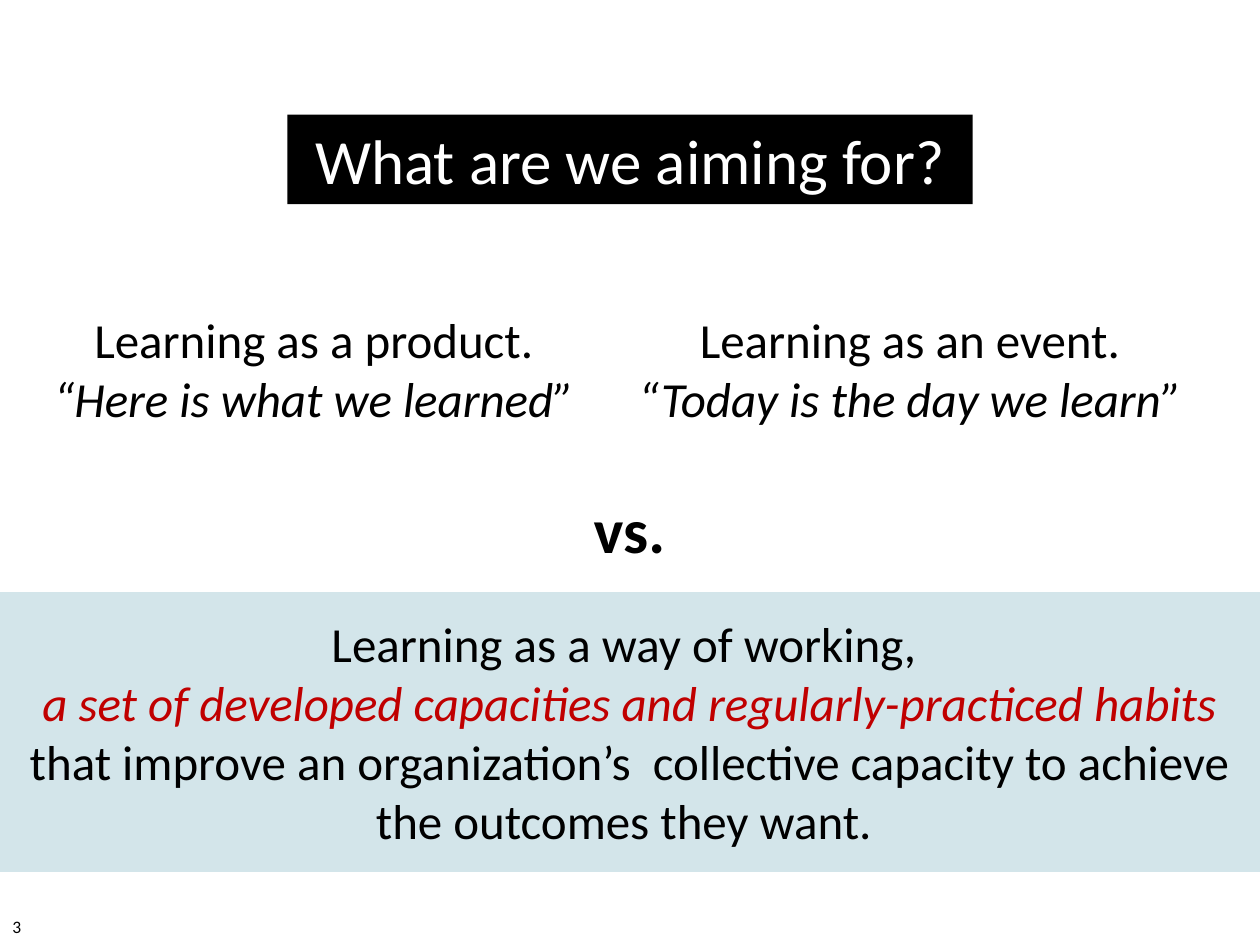
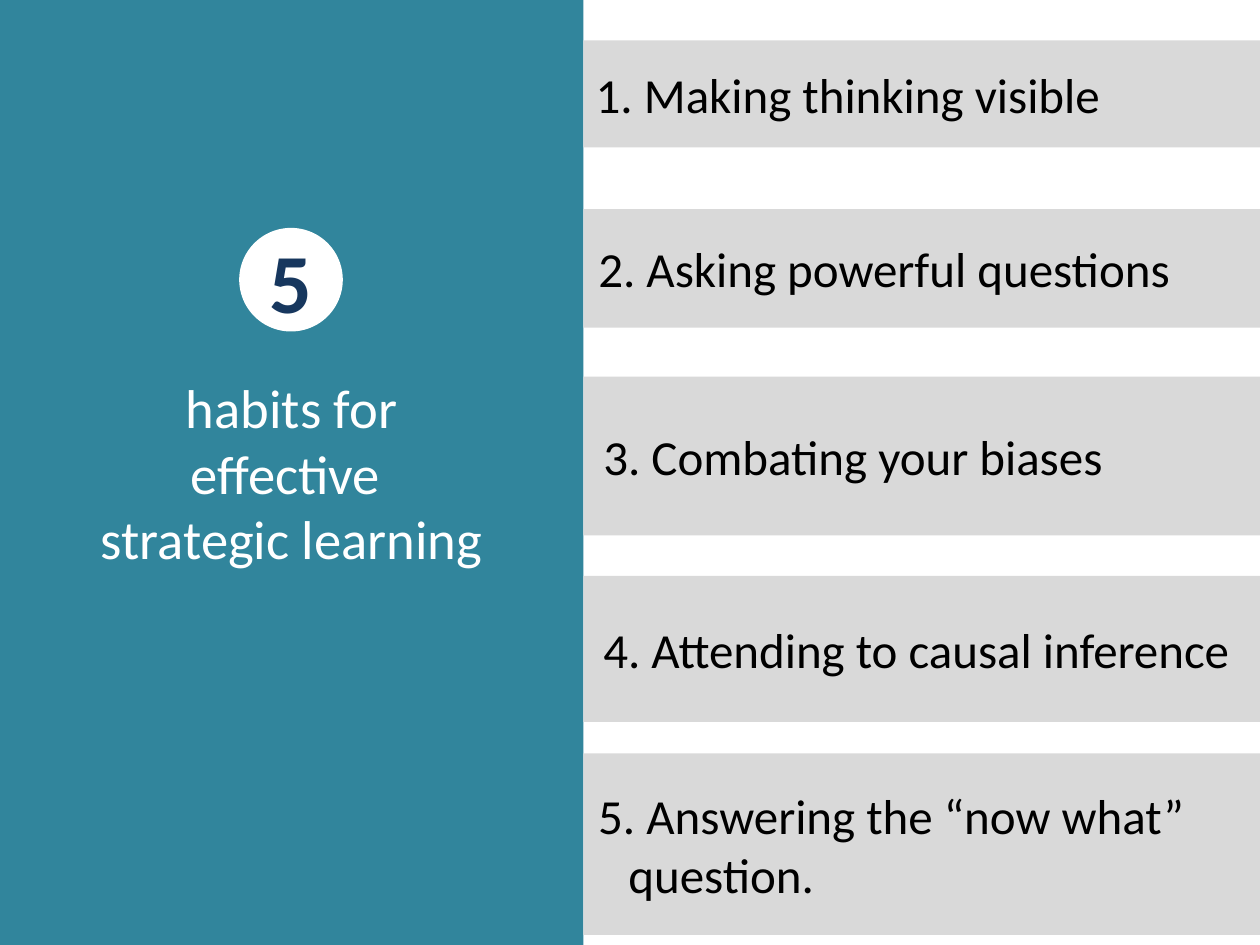
"""Build two slides on strategic learning as a way of working."""
from lxml import etree
from pptx import Presentation
from pptx.dml.color import RGBColor
from pptx.enum.shapes import MSO_SHAPE
from pptx.enum.text import MSO_ANCHOR, MSO_AUTO_SIZE, PP_ALIGN
from pptx.oxml.ns import qn
from pptx.util import Inches, Pt

FONT = "Calibri"
BLACK = RGBColor(0x00, 0x00, 0x00)
WHITE = RGBColor(0xFF, 0xFF, 0xFF)
TEAL = RGBColor(0x31, 0x85, 0x9C)
RED = RGBColor(0xC0, 0x00, 0x00)
NAVY = RGBColor(0x17, 0x37, 0x5E)
GRAY = RGBColor(0xD9, 0xD9, 0xD9)
RECTANGLE, OVAL = MSO_SHAPE.RECTANGLE, MSO_SHAPE.OVAL
LEFT, CENTER = PP_ALIGN.LEFT, PP_ALIGN.CENTER
TOP, MIDDLE = MSO_ANCHOR.TOP, MSO_ANCHOR.MIDDLE
NO_AUTOFIT = MSO_AUTO_SIZE.NONE
TITLE_ONLY, BLANK = 5, 6
SLIDE_WIDTH, SLIDE_HEIGHT = 10, 7.5
PANEL_WIDTH = 4.63
STATEMENT_TOP_INSET = 0.17

HABITS = [
    ("1. Making thinking visible", 0.32, 0.85, 0, 0),
    ("2. Asking powerful questions", 1.66, 0.94, 0.45, -0.43),
    ("3. Combating your biases", 2.99, 1.26, 0.51, -0.45),
    ("4. Attending to causal inference", 4.57, 1.16, 0.45, -0.39),
    ("5. Answering the “now what” question.", 5.98, 1.44, 0.26, -0.24),
]


def write_text(shape, paragraphs, size=28, color=BLACK, bold=False, align=CENTER,
               anchor=TOP, top_inset=0.05, margin=0, indent=0):
    """Fill a shape with paragraphs, each a list of (text, font overrides) runs."""
    frame = shape.text_frame
    frame.word_wrap = True
    frame.auto_size = NO_AUTOFIT
    frame.vertical_anchor = anchor
    frame.margin_top = Inches(top_inset)
    for index, runs in enumerate(paragraphs):
        paragraph = frame.add_paragraph() if index else frame.paragraphs[0]
        paragraph.alignment = align
        if margin:
            properties = paragraph._p.get_or_add_pPr()
            properties.set("marL", str(Inches(margin)))
            properties.set("indent", str(Inches(indent)))
        for text, overrides in runs:
            for line_number, line in enumerate(text.split("\n")):
                if line_number:
                    paragraph.add_line_break()
                run = paragraph.add_run()
                run.text = line
                run.font.name = FONT
                run.font.size = Pt(size)
                run.font.bold = bold
                run.font.italic = overrides.get("italic", False)
                run.font.color.rgb = overrides.get("color", color)


def fill_shape(shape, color, opacity=100):
    """Give a shape a solid fill, optionally see-through."""
    shape.fill.solid()
    shape.fill.fore_color.rgb = color
    if opacity < 100:
        color_element = shape._element.spPr.find(".//" + qn("a:srgbClr"))
        etree.SubElement(color_element, qn("a:alpha")).set("val", str(opacity * 1000))


def add_block(slide, left, top, width, height, color, kind=RECTANGLE, opacity=100):
    """Add a filled shape with no outline or shadow."""
    shape = slide.shapes.add_shape(kind, Inches(left), Inches(top),
                                   Inches(width), Inches(height))
    shape.shadow.inherit = False
    fill_shape(shape, color, opacity)
    shape.line.fill.background()
    return shape


def add_label(slide, text, left, top, width, height, **text_format):
    """Add a plain text box."""
    box = slide.shapes.add_textbox(Inches(left), Inches(top), Inches(width), Inches(height))
    write_text(box, [[(text, {})]], **text_format)


def set_title(slide, paragraphs, left, top, width, height, color, size):
    """Turn the title placeholder into a filled block with white text."""
    title = slide.shapes.title
    title.left, title.top = Inches(left), Inches(top)
    title.width, title.height = Inches(width), Inches(height)
    fill_shape(title, color)
    write_text(title, paragraphs, size=size, color=WHITE, anchor=MIDDLE)


def add_statement(slide, paragraphs, left, top, width, height, color, opacity):
    """Add a translucent block holding one view of learning."""
    block = add_block(slide, left, top, width, height, color, opacity=opacity)
    write_text(block, paragraphs, top_inset=STATEMENT_TOP_INSET)


def add_habit(slide, text, top, height, margin, indent):
    """Add one gray habit bar to the right of the panel."""
    bar = add_block(slide, PANEL_WIDTH, top, SLIDE_WIDTH - PANEL_WIDTH, height, GRAY)
    write_text(bar, [[(text, {})]], align=LEFT, anchor=MIDDLE, margin=margin, indent=indent)


def build_aim_slide(presentation):
    """Contrast learning as product or event with a way of working."""
    slide = presentation.slides.add_slide(presentation.slide_layouts[TITLE_ONLY])
    italic = {"italic": True}
    set_title(slide, [[("What are we aiming for?", {})]], 2.28, 0.91, 5.44, 0.71, BLACK, 36)
    add_label(slide, "3", 0, 7.22, 0.71, 0.28, size=10, align=LEFT)
    add_statement(slide, [
        [("Learning as a way of working, ", {})],
        [("a set of developed capacities and regularly-practiced habits ",
          {"italic": True, "color": RED}),
         ("that improve an organization’s  collective capacity to achieve "
          "the outcomes they want. ", {})],
    ], -0.07, 4.7, 10.13, 2.22, TEAL, 21)
    add_statement(slide, [[("Learning as a product.", {})],
                          [("“Here is what we learned”", italic)]],
                  0.14, 2.29, 4.7, 1.16, WHITE, 77)
    add_statement(slide, [[("Learning as an event. ", {})],
                          [("“Today is the day we learn” ", italic)]],
                  4.67, 2.29, 5.19, 1.16, WHITE, 77)
    add_label(slide, "vs.", 4.32, 3.84, 1.35, 0.71, size=36, bold=True)


def build_habits_slide(presentation):
    """List the five habits beside a teal title panel."""
    slide = presentation.slides.add_slide(presentation.slide_layouts[TITLE_ONLY])
    set_title(slide, [[("habits for", {})], [("effective \nstrategic learning", {})]],
              0, 0, PANEL_WIDTH, SLIDE_HEIGHT, TEAL, 31.2)
    badge = add_block(slide, 1.93, 1.84, 0.76, 0.76, WHITE, kind=OVAL)
    badge.line.color.rgb = WHITE
    badge.line.width = Pt(4.5)
    write_text(badge, [[("5", {})]], size=48, color=NAVY, bold=True, anchor=MIDDLE)
    for habit in HABITS:
        add_habit(slide, *habit)


def main():
    """Create and save the presentation."""
    presentation = Presentation()
    presentation.slide_width = Inches(SLIDE_WIDTH)
    presentation.slide_height = Inches(SLIDE_HEIGHT)
    build_aim_slide(presentation)
    build_habits_slide(presentation)
    presentation.save("out.pptx")


if __name__ == "__main__":
    main()
